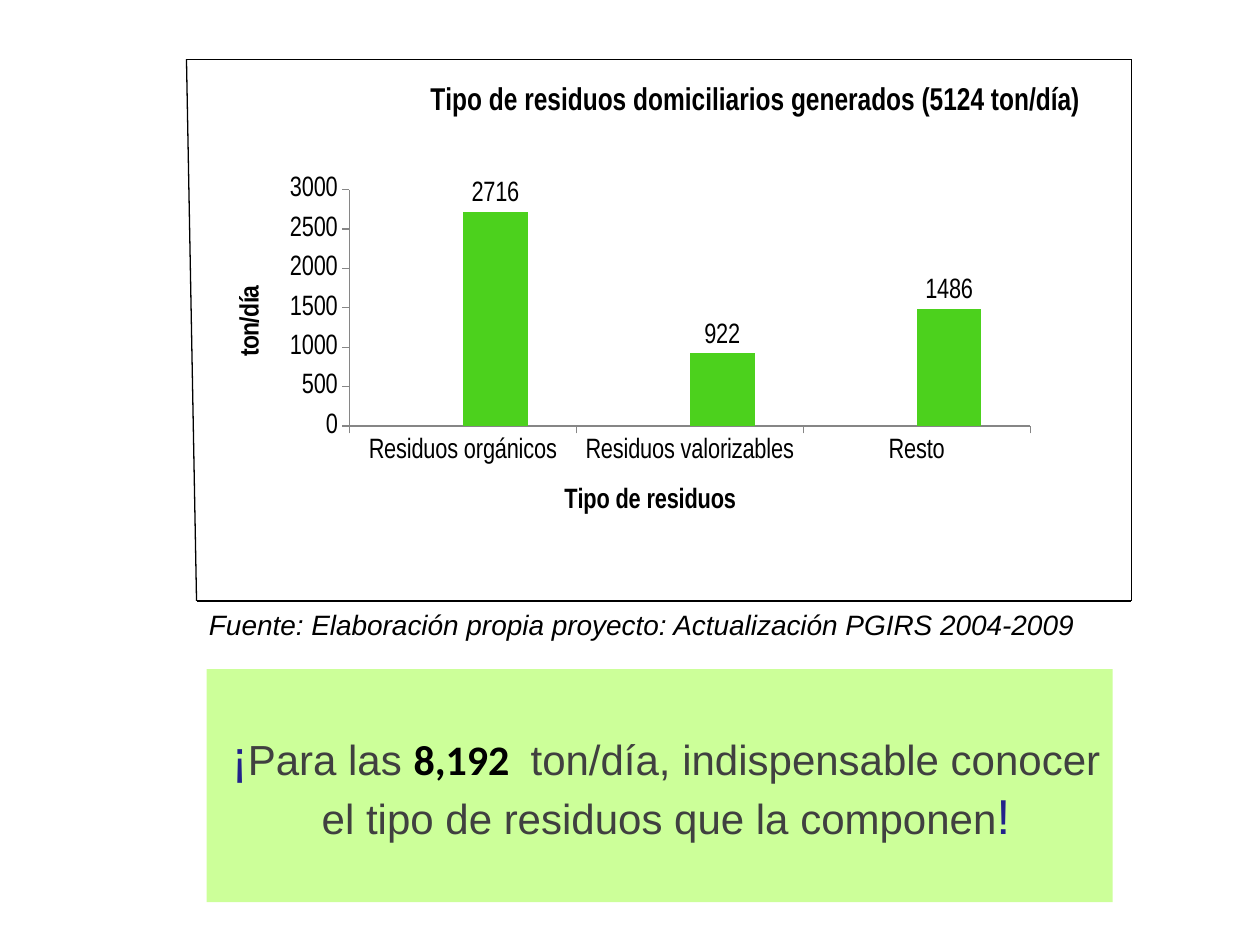
from dataclasses import dataclass

from lxml import etree
from pptx import Presentation
from pptx.chart.data import CategoryChartData
from pptx.dml.color import RGBColor
from pptx.enum.chart import XL_CHART_TYPE, XL_LABEL_POSITION, XL_TICK_MARK
from pptx.enum.shapes import MSO_CONNECTOR, MSO_SHAPE
from pptx.enum.text import MSO_ANCHOR, PP_ALIGN
from pptx.oxml import parse_xml
from pptx.oxml.ns import nsdecls, qn
from pptx.util import Inches, Pt


@dataclass(frozen=True)
class Theme:
    black: str = "000000"
    axis: str = "868686"
    empty_bar: str = "00CC99"
    bar: str = "4CD11D"
    panel: str = "CCFF99"
    body: str = "404040"
    accent: str = "22228B"
    chart_font: str = "Arial Narrow"
    font: str = "Arial"
    number_font: str = "Calibri"
    title_size: int = 18
    label_size: int = 16
    message_size: int = 24
    mark_size: int = 28


THEME = Theme()


def style_font(font, size, color=THEME.black, name=THEME.font, bold=False, italic=False):
    font.size = Pt(size)
    font.color.rgb = RGBColor.from_string(color)
    font.name = name
    font.bold = bold
    font.italic = italic


def place_layout(parent, x, y, width=None, height=None):
    """Fix a chart part at fractions of the chart area."""
    for old in parent.findall(qn("c:layout")):
        parent.remove(old)
    inner = '<c:layoutTarget val="inner"/>' if width else ""
    extent = f'<c:w val="{width}"/><c:h val="{height}"/>' if width else ""
    layout = parse_xml(
        f'<c:layout {nsdecls("c")}><c:manualLayout>{inner}'
        f'<c:xMode val="edge"/><c:yMode val="edge"/>'
        f'<c:x val="{x}"/><c:y val="{y}"/>{extent}</c:manualLayout></c:layout>')
    text = parent.find(qn("c:tx"))
    if text is None:
        parent.insert(0, layout)
    else:
        text.addnext(layout)


prs = Presentation()
prs.slide_width, prs.slide_height = Inches(10), Inches(7.5)
slide = prs.slides.add_slide(prs.slide_layouts[6])

# Waste chart
waste = CategoryChartData()
waste.categories = ["Residuos orgánicos", "Residuos valorizables", "Resto"]
waste.add_series("Series 1", [None, None, None])
waste.add_series("Series 2", [2716, 922, 1486])
chart = slide.shapes.add_chart(
    XL_CHART_TYPE.COLUMN_CLUSTERED,
    Inches(1.64), Inches(0.55), Inches(7.03), Inches(3.75), waste).chart
style_font(chart.font, THEME.title_size, name=THEME.chart_font)
chart.has_legend = False
chart.has_title = True

category_axis, value_axis = chart.category_axis, chart.value_axis
value_axis.minimum_scale, value_axis.maximum_scale = 0, 3000
value_axis.major_unit = 500
value_axis.has_major_gridlines = False
category_axis.major_tick_mark = value_axis.major_tick_mark = XL_TICK_MARK.OUTSIDE
for axis in (category_axis, value_axis):
    axis.format.line.color.rgb = RGBColor.from_string(THEME.axis)
    axis.format.line.width = Pt(0.75)
    style_font(axis.tick_labels.font, THEME.label_size, name=THEME.chart_font)

for part, words, size, x, y in [
    (chart.chart_title, "Tipo de residuos domiciliarios generados (5124 ton/día) ",
     THEME.title_size, 0.26, 0.02),
    (category_axis.axis_title, "Tipo de residuos", THEME.label_size, 0.42, 0.87),
    (value_axis.axis_title, "ton/día", THEME.label_size, 0.03, 0.44),
]:
    run = part.text_frame.paragraphs[0].add_run()
    run.text = words
    style_font(run.font, size, name=THEME.chart_font, bold=True)
    place_layout(part._element, x, y)
place_layout(chart._chartSpace.chart.plotArea, 0.17, 0.255, 0.81, 0.5)

plot = chart.plots[0]
plot.gap_width, plot.overlap = 150, 0
plot.vary_by_categories = False
for series, color in zip(plot.series, (THEME.empty_bar, THEME.bar)):
    series.format.fill.solid()
    series.format.fill.fore_color.rgb = RGBColor.from_string(color)
values = plot.series[1].data_labels
values.show_value = True
values.position = XL_LABEL_POSITION.OUTSIDE_END
style_font(values.font, THEME.label_size, name=THEME.chart_font)

# Frame around the chart, with a slanted left side
top_left, top_right = (1.48, 0.47), (8.98, 0.47)
bottom_left, bottom_right = (1.56, 4.77), (8.98, 4.77)
for start, end in [(top_left, bottom_left), (bottom_left, bottom_right),
                   (top_left, top_right), (top_right, bottom_right)]:
    side = slide.shapes.add_connector(
        MSO_CONNECTOR.STRAIGHT, *map(Inches, start), *map(Inches, end))
    side.line.color.rgb = RGBColor.from_string(THEME.black)
    side.line.width = Pt(0.75)
    etree.SubElement(side._element.spPr, qn("a:effectLst"))

# Source of the data
credit = slide.shapes.add_textbox(
    Inches(1.56), Inches(4.77), Inches(7.42), Inches(0.37)).text_frame
credit.word_wrap = True
run = credit.paragraphs[0].add_run()
run.text = "Fuente: Elaboración propia proyecto: Actualización PGIRS 2004-2009"
style_font(run.font, THEME.label_size, italic=True)

# Closing message
panel = slide.shapes.add_shape(
    MSO_SHAPE.RECTANGLE, Inches(1.64), Inches(5.31), Inches(7.19), Inches(1.85))
panel.shadow.inherit = False
panel.fill.solid()
panel.fill.fore_color.rgb = RGBColor.from_string(THEME.panel)
panel.line.fill.background()
message = panel.text_frame
message.word_wrap = True
message.vertical_anchor = MSO_ANCHOR.MIDDLE
message.margin_left, message.margin_right = Inches(0.15), Inches(0.05)
paragraph = message.paragraphs[0]
paragraph.alignment = PP_ALIGN.CENTER
for words, size, color, name, bold in [
    ("¡", THEME.mark_size, THEME.accent, THEME.font, False),
    ("Para las ", THEME.message_size, THEME.body, THEME.font, False),
    ("8,192 ", THEME.message_size, THEME.black, THEME.number_font, True),
    (" ton/día, indispensable conocer el tipo de residuos que la componen",
     THEME.message_size, THEME.body, THEME.font, False),
    ("!", THEME.mark_size, THEME.accent, THEME.font, False),
]:
    run = paragraph.add_run()
    run.text = words
    style_font(run.font, size, color, name, bold)

prs.save("out.pptx")
